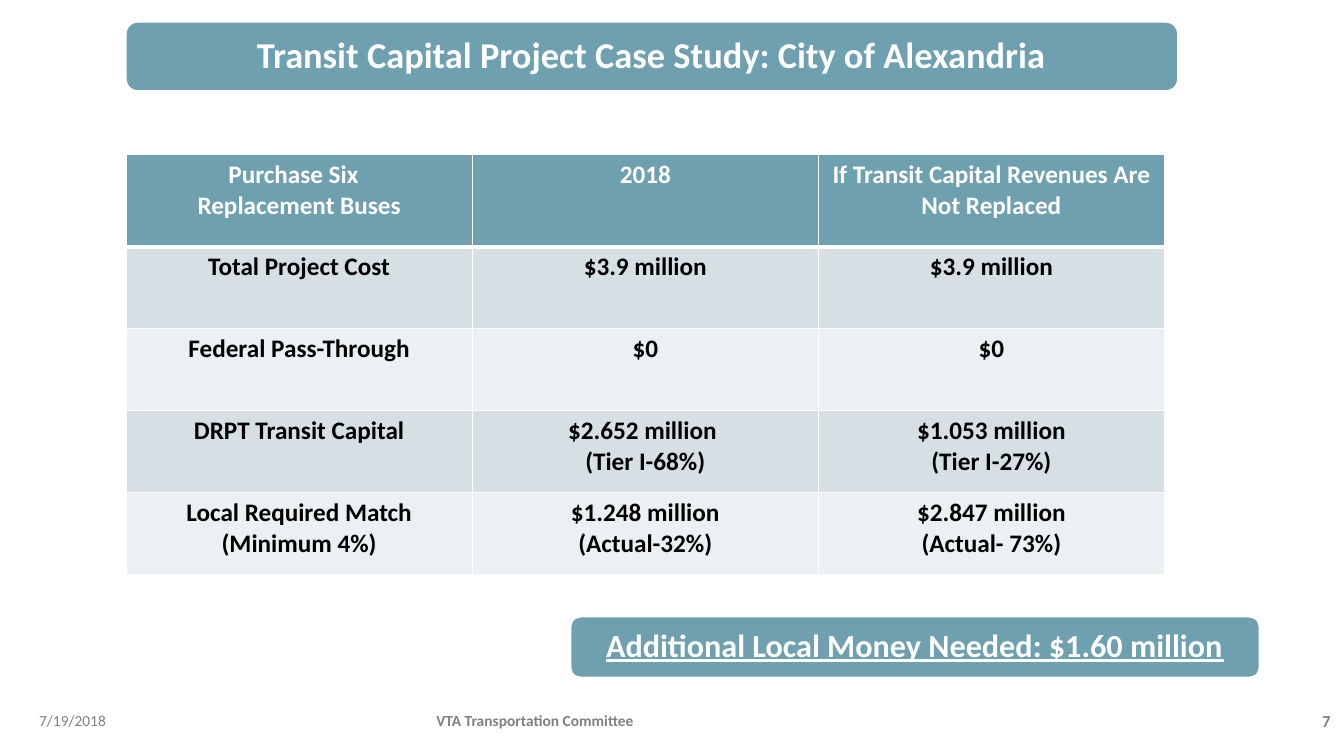
"""Build the transit capital case study slide."""
from dataclasses import dataclass

from lxml import etree
from pptx import Presentation
from pptx import util as u
from pptx.dml.color import RGBColor
from pptx.enum import shapes, text
from pptx.oxml.ns import qn


@dataclass(frozen=True)
class Theme:
    font: str = "Calibri"
    teal: str = "6EA0B0"
    bands: tuple = ("D5DFE4", "EBF0F2")
    white: str = "FFFFFF"
    black: str = "000000"
    grey: str = "808080"
    title: int = 26
    callout: int = 23
    body: int = 18
    page: int = 12
    footer: int = 11


def write(frame, content, *, size, color, font, bold=True, underline=False,
          align=text.PP_ALIGN.CENTER, spacing=1.0):
    for index, line in enumerate(content.split("\n")):
        paragraph = frame.paragraphs[0] if index == 0 else frame.add_paragraph()
        paragraph.alignment = align
        paragraph.line_spacing = spacing
        run = paragraph.add_run()
        run.text = line
        run.font.name = font
        run.font.size = u.Pt(size)
        run.font.bold = bold
        run.font.underline = underline
        run.font.color.rgb = RGBColor.from_string(color)


class SlideBuilder:
    def __init__(self, presentation, theme):
        self.width = presentation.slide_width
        self.height = presentation.slide_height
        self.theme = theme
        self.slide = presentation.slides.add_slide(presentation.slide_layouts[6])

    def box(self, left, top, width, height):
        return (int(self.width * left / 100), int(self.height * top / 100),
                int(self.width * width / 100), int(self.height * height / 100))

    def banner(self, content, area, size, underline=False):
        shape = self.slide.shapes.add_shape(
            shapes.MSO_SHAPE.ROUNDED_RECTANGLE, *self.box(*area))
        shape.shadow.inherit = False
        shape.fill.solid()
        shape.fill.fore_color.rgb = RGBColor.from_string(self.theme.teal)
        shape.line.color.rgb = RGBColor.from_string(self.theme.white)
        shape.line.width = u.Pt(0.85)
        frame = shape.text_frame
        frame.word_wrap = True
        frame.vertical_anchor = text.MSO_ANCHOR.MIDDLE
        write(frame, content, size=size, color=self.theme.white,
              font=self.theme.font, underline=underline, spacing=0.9)

    def footer(self, content, left, width, align=text.PP_ALIGN.LEFT, **style):
        shape = self.slide.shapes.add_textbox(*self.box(left, 92.67, width, 5.33))
        frame = shape.text_frame
        frame.word_wrap = True
        frame.vertical_anchor = text.MSO_ANCHOR.MIDDLE
        style = {"size": self.theme.footer, **style}
        write(frame, content, color=self.theme.grey, font=self.theme.font,
              align=align, **style)

    def borders(self, cell, top, bottom):
        properties = cell._tc.get_or_add_tcPr()
        for side, points in (("L", 1), ("R", 1), ("T", top), ("B", bottom)):
            line = etree.SubElement(properties, qn(f"a:ln{side}"), w=str(u.Pt(points)))
            fill = etree.SubElement(line, qn("a:solidFill"))
            etree.SubElement(fill, qn("a:srgbClr"), val=self.theme.white)

    def table(self, rows, area, header_share):
        area = self.box(*area)
        table = self.slide.shapes.add_table(len(rows), len(rows[0]), *area).table
        table.horz_banding = False
        header_height = int(area[3] * header_share)
        body_height = (area[3] - header_height) // (len(rows) - 1)
        for row, values in enumerate(rows):
            header = row == 0
            table.rows[row].height = header_height if header else body_height
            background = self.theme.teal if header else self.theme.bands[(row - 1) % 2]
            for column, value in enumerate(values):
                cell = table.cell(row, column)
                self.borders(cell, 3 if row == 1 else 1, 3 if header else 1)
                cell.fill.solid()
                cell.fill.fore_color.rgb = RGBColor.from_string(background)
                write(cell.text_frame, value, size=self.theme.body,
                      color=self.theme.white if header else self.theme.black,
                      font=self.theme.font)


CASE_STUDY = [
    ("Purchase Six  \nReplacement Buses", "2018",
     "If Transit Capital Revenues Are Not Replaced"),
    ("Total Project Cost", "$3.9 million", "$3.9 million"),
    ("Federal Pass-Through", "$0", "$0"),
    ("DRPT Transit Capital", "$2.652 million \n(Tier I-68%)",
     "$1.053 million\n(Tier I-27%)"),
    ("Local Required Match\n(Minimum 4%)", "$1.248 million\n(Actual-32%)",
     "$2.847 million\n(Actual- 73%)"),
]


def main():
    presentation = Presentation()
    presentation.slide_width = u.Inches(13.33)
    presentation.slide_height = u.Inches(7.5)
    theme = Theme()
    builder = SlideBuilder(presentation, theme)
    builder.footer("7", 87.25, 12.5, text.PP_ALIGN.RIGHT, size=theme.page)
    builder.table(CASE_STUDY, (9.38, 20.4, 77.27, 55.6), header_share=0.22)
    builder.banner("Transit Capital Project Case Study: City of Alexandria",
                   (9.38, 2.93, 78.24, 9.07), theme.title)
    builder.banner("Additional Local Money Needed: $1.60 million",
                   (42.46, 81.6, 51.24, 8), theme.callout, underline=True)
    builder.footer("VTA Transportation Committee", 31.73, 48.46)
    builder.footer("7/19/2018", 2.18, 22.5, bold=False)
    presentation.save("out.pptx")


if __name__ == "__main__":
    main()
